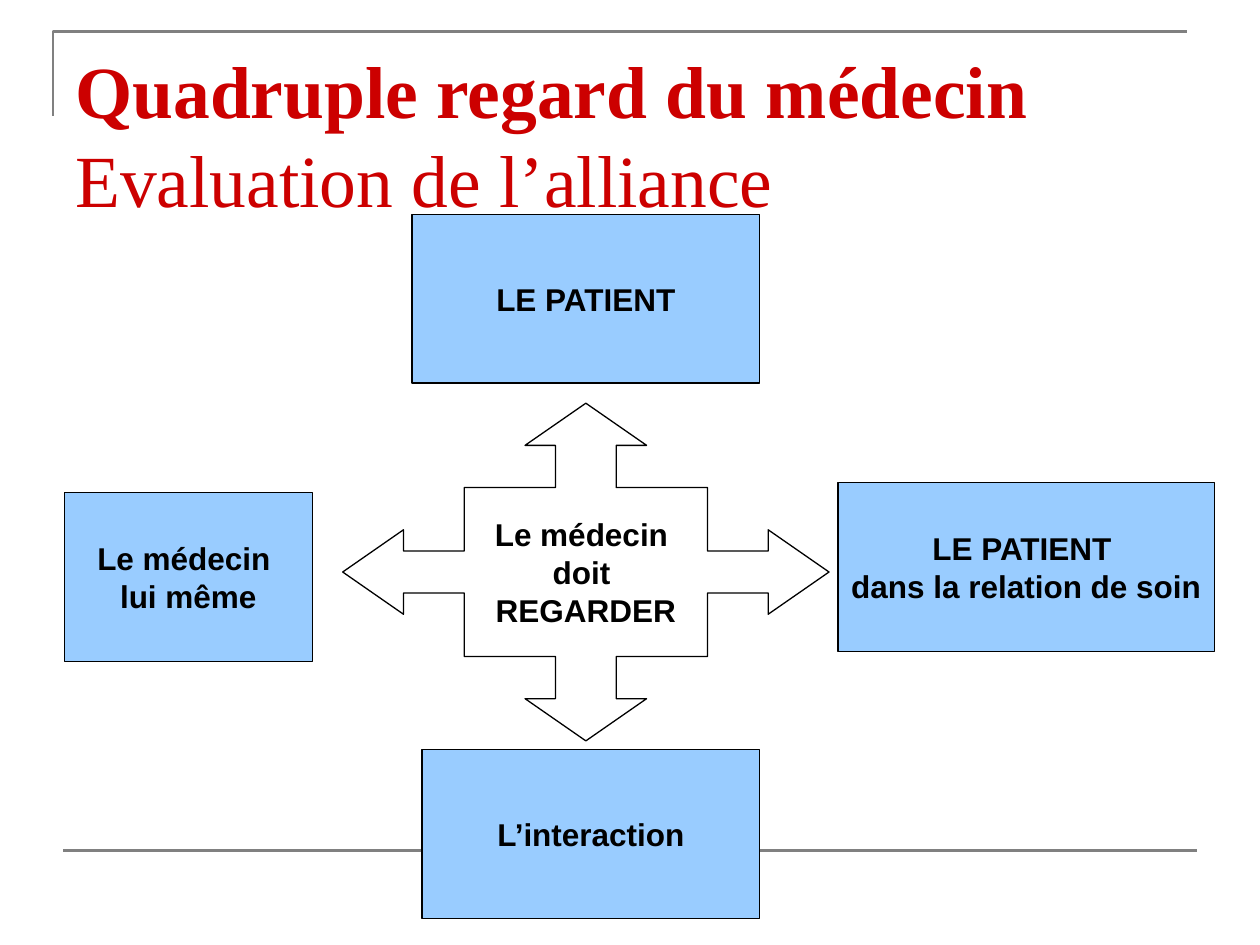
from lxml import etree
from pptx import Presentation
from pptx.dml.color import RGBColor
from pptx.enum.shapes import MSO_CONNECTOR, MSO_SHAPE
from pptx.enum.text import MSO_ANCHOR, PP_ALIGN
from pptx.oxml.ns import qn
from pptx.util import Inches, Pt

RECT = MSO_SHAPE.RECTANGLE
STRAIGHT = MSO_CONNECTOR.STRAIGHT
MIDDLE = MSO_ANCHOR.MIDDLE
CENTER = PP_ALIGN.CENTER

BLACK, WHITE, GREY = "000000", "FFFFFF", "808080"
RED, BLUE = "CC0000", "99CCFF"

BOX_HEIGHT = 1.34
BOXES = [
    (3.27, 1.7, 2.76, ["LE PATIENT"]),
    (6.65, 3.83, 2.99, ["LE PATIENT ", "dans la relation de soin"]),
    (0.51, 3.91, 1.97, ["Le médecin ", "lui même"]),
    (3.35, 5.95, 2.68, ["L’interaction"]),
]

# Upper arm of the four-way arrow, on a 16 by 16 grid
GRID = 16
ARM = [(4, 4), (7, 4), (7, 2), (6, 2), (8, 0), (10, 2), (9, 2), (9, 4)]


def rgb(value):
    return RGBColor.from_string(value)


def set_line(line, color, width):
    line.color.rgb = rgb(color)
    line.width = Pt(width)


def add_outline(slide, points, close):
    points = [(Inches(x), Inches(y)) for x, y in points]
    builder = slide.shapes.build_freeform(*points[0], scale=1.0)
    builder.add_line_segments(points[1:], close=close)
    sp = builder.convert_to_shape()
    sp.shadow.inherit = False
    return sp


def add_frame(slide):
    corner = add_outline(slide, [(0.42, 0.92), (0.42, 0.25), (9.42, 0.25)], False)
    corner.fill.background()
    set_line(corner.line, GREY, 1.5)
    rule = slide.shapes.add_connector(
        STRAIGHT, Inches(0.5), Inches(6.75), Inches(9.5), Inches(6.75))
    set_line(rule.line, GREY, 1.5)
    etree.SubElement(rule._element.spPr, qn("a:effectLst"))


def add_title(slide, strong, plain):
    box = slide.shapes.add_textbox(Inches(0.5), Inches(0.3), Inches(9), Inches(1.25))
    tf = box.text_frame
    tf.word_wrap = True
    p = tf.paragraphs[0]
    p.line_spacing = Pt(51)
    p.font.size = Pt(42)
    p.font.name = "Times New Roman"
    p.font.color.rgb = rgb(RED)
    r = p.add_run()
    r.text = strong
    r.font.bold = True
    p.add_line_break()
    p.add_run().text = plain


def style_shape(sp, fill, lines):
    """Fill and outline a shape and centre bold lines of text in it."""
    sp.shadow.inherit = False
    sp.fill.solid()
    sp.fill.fore_color.rgb = rgb(fill)
    set_line(sp.line, BLACK, 0.75)
    tf = sp.text_frame
    tf.word_wrap = False
    tf.vertical_anchor = MIDDLE
    tf.text = "\n".join(lines)
    for p in tf.paragraphs:
        p.alignment = CENTER
        p.font.size = Pt(18)
        p.font.name = "Arial"
        p.font.bold = True
        p.font.color.rgb = rgb(BLACK)


def add_four_way_arrow(slide, left, top, width, height, lines):
    points, arm = [], ARM
    for _ in range(4):
        points += arm
        arm = [(GRID - y, x) for x, y in arm]
    points = [(left + x * width / GRID, top + y * height / GRID) for x, y in points]
    style_shape(add_outline(slide, points, True), WHITE, lines)


def add_box(slide, left, top, width, lines):
    sp = slide.shapes.add_shape(
        RECT, Inches(left), Inches(top), Inches(width), Inches(BOX_HEIGHT))
    style_shape(sp, BLUE, lines)


def main():
    prs = Presentation()
    prs.slide_width, prs.slide_height = Inches(10), Inches(7.5)
    slide = prs.slides.add_slide(prs.slide_layouts[6])
    add_frame(slide)
    add_title(slide, "Quadruple regard du médecin", "Evaluation de l’alliance")
    add_four_way_arrow(slide, 2.72, 3.2, 3.86, 2.68,
                       ["Le médecin ", "doit ", "REGARDER"])
    for box in BOXES:
        add_box(slide, *box)
    prs.save("out.pptx")


if __name__ == "__main__":
    main()
